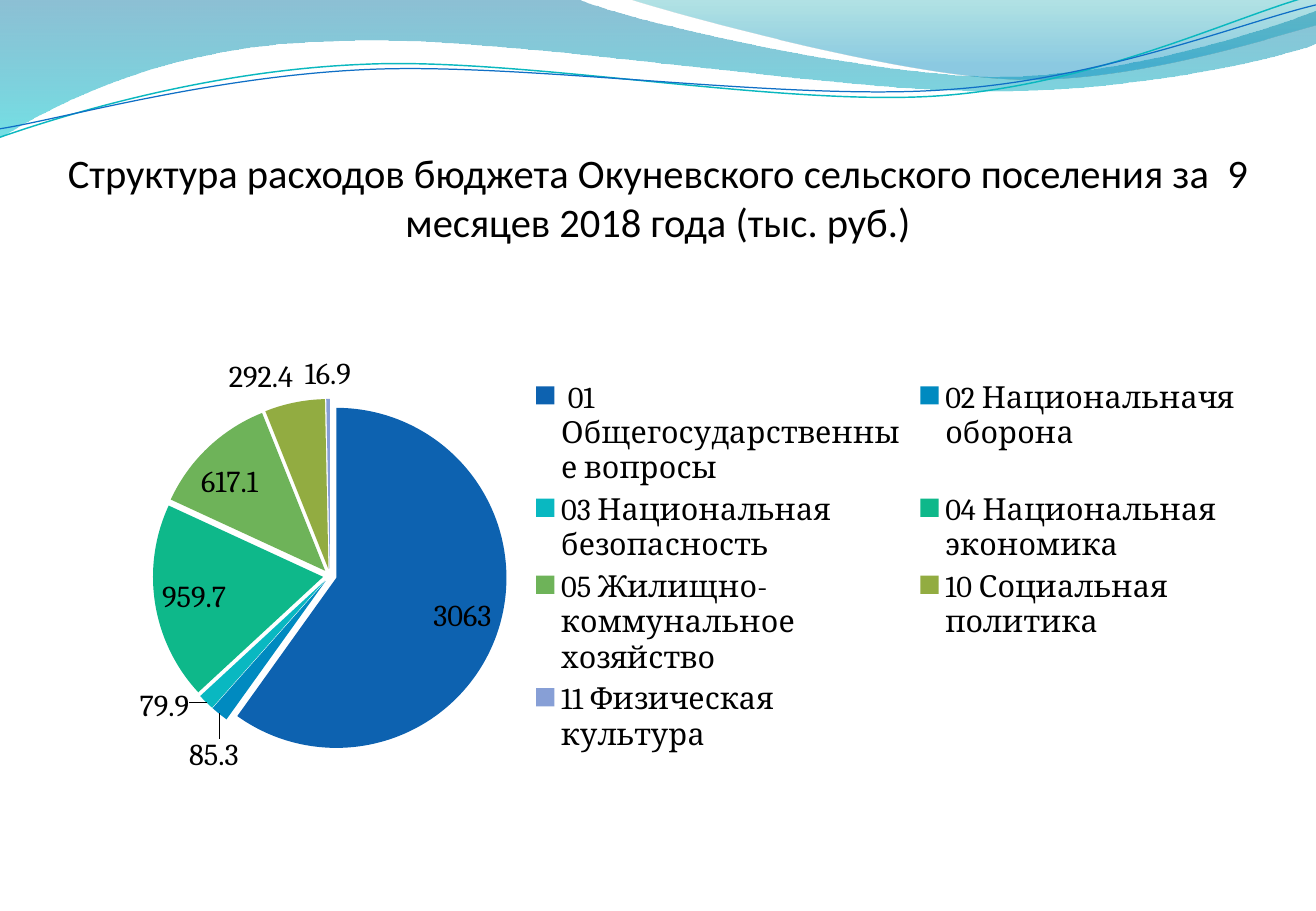
from lxml import etree
from pptx import Presentation
from pptx.chart.data import CategoryChartData
from pptx.dml.color import RGBColor
from pptx.enum import chart as ch, text
from pptx.oxml import parse_xml
from pptx.oxml.ns import nsdecls, qn
from pptx.util import Inches, Pt

TITLE = ("Структура расходов бюджета Окуневского сельского поселения "
         "за  9 месяцев 2018 года (тыс. руб.)")

INSIDE, OUTSIDE = ch.XL_LABEL_POSITION.INSIDE_END, ch.XL_LABEL_POSITION.OUTSIDE_END
# Category, value, colour, label position, label offset (share of chart)
EXPENSES = [
    (" 01 Общегосударственные вопросы", 3063, "0D62B0", INSIDE, (0, 0.01)),
    ("02 Национальначя оборона", 85.3, "008AC0", OUTSIDE, (0.02, 0.03)),
    ("03 Национальная безопасность", 79.9, "09B8C1", OUTSIDE, (-0.01, -0.03)),
    ("04 Национальная экономика", 959.7, "0EB88A", INSIDE, (0, 0.02)),
    ("05 Жилищно-коммунальное хозяйство", 617.1, "6EB359", INSIDE, (-0.01, 0.02)),
    ("10 Социальная политика", 292.4, "92AC41", OUTSIDE, None),
    ("11 Физическая культура", 16.9, "879FD6", OUTSIDE, None),
]

# Waves: a start point, then points (2 numbers) or Bezier curves (6 numbers)
# Gradient stops: position, colour, opacity, in percent
FILLED_WAVES = [
    ([(0, 0), (4.77, 0), (5.15, 0.17, 7.19, 0.63, 8.22, 0.63),
      (9.24, 0.63, 10.38, 0.26, 10.83, 0.09), (10.83, 0.36),
      (10.65, 0.44, 9.42, 0.76, 8.08, 0.75), (6.74, 0.75, 4.14, 0.28, 2.79, 0.34),
      (1.4, 0.36, 0.5, 0.83, 0, 1.13)],
     [(0, "0074A1", 45), (100, "00C6CF", 55)]),
    ([(5.19, 0), (5.52, 0.11, 7.39, 0.62, 8.33, 0.65),
      (9.27, 0.69, 10.42, 0.32, 10.83, 0.21), (10.83, 0)],
     [(0, "00A1A9", 30), (80, "008BBF", 45)]),
]
LINE_WAVES = [
    ([(0, 1.13), (0.52, 0.95, 1.71, 0.58, 3, 0.53), (4.28, 0.47, 6.42, 0.88, 7.72, 0.79),
      (9.02, 0.7, 10.17, 0.13, 10.81, -0.04)], "0AB8BF", 0.85),
    ([(0, 1.06), (0.51, 0.98, 1.77, 0.62, 3.07, 0.57), (4.36, 0.52, 6.47, 0.83, 7.76, 0.74),
      (9.06, 0.66, 10.2, 0.19, 10.83, 0.04)], "0F6FC6", 0.75),
]
UNITS = 100  # freeform units per inch


def rgb(color):
    return RGBColor.from_string(color)


def add_wave(slide, steps, close):
    """Join the end points, then bend the segments that have control points."""
    ends = [(round(s[-2] * UNITS), round(s[-1] * UNITS)) for s in steps]
    builder = slide.shapes.build_freeform(*ends[0], scale=Inches(1 / UNITS))
    builder.add_line_segments(ends[1:], close=close)
    sp = builder.convert_to_shape()
    sp.shadow.inherit = False
    left, top = (min(axis) for axis in zip(*ends))
    segments = list(sp._element.iter(qn("a:lnTo")))
    for step, segment in zip(steps[1:], segments):
        if len(step) == 6:
            curve = etree.Element(qn("a:cubicBezTo"))
            for x, y in zip(step[::2], step[1::2]):
                etree.SubElement(curve, qn("a:pt"), x=str(round(x * UNITS) - left),
                                 y=str(round(y * UNITS) - top))
            segment.getparent().replace(segment, curve)
    return sp


def fill_gradient(sp, stops):
    sp.fill.gradient()
    grad = sp._element.spPr.find(qn("a:gradFill"))
    gs = "".join(f'<a:gs pos="{pos * 1000}"><a:srgbClr val="{color}">'
                 f'<a:alpha val="{alpha * 1000}"/></a:srgbClr></a:gs>'
                 for pos, color, alpha in stops)
    grad.getparent().replace(grad, parse_xml(
        f'<a:gradFill {nsdecls("a")} rotWithShape="1"><a:gsLst>{gs}</a:gsLst>'
        '<a:lin ang="5400000" scaled="0"/></a:gradFill>'))


def place(element, index, **values):
    """Set a manual chart layout, in shares of the chart area."""
    old = element.find(qn("c:layout"))
    if old is not None:
        element.remove(old)
    items = "".join(f'<c:{k} val="{v}"/>' for k, v in values.items())
    element.insert(index, parse_xml(
        f'<c:layout {nsdecls("c")}><c:manualLayout>{items}</c:manualLayout></c:layout>'))


prs = Presentation()
prs.slide_width, prs.slide_height = Inches(10.83), Inches(7.5)
slide = prs.slides.add_slide(prs.slide_layouts[5])

# Waves along the top
for steps, stops in FILLED_WAVES:
    sp = add_wave(slide, steps, True)
    fill_gradient(sp, stops)
    sp.line.fill.background()
for steps, color, width in LINE_WAVES:
    sp = add_wave(slide, steps, False)
    sp.fill.background()
    sp.line.color.rgb = rgb(color)
    sp.line.width = Pt(width)

# Title
title = slide.shapes.title
title.left, title.top, title.width, title.height = map(Inches, (0.54, 0.77, 9.75, 1.25))
tf = title.text_frame
tf.text = TITLE
tf.word_wrap = True
tf.auto_size = text.MSO_AUTO_SIZE.NONE
tf.vertical_anchor = text.MSO_ANCHOR.BOTTOM
tf.margin_left = tf.margin_right = tf.margin_bottom = 0
tf.margin_top = Inches(0.05)
p = tf.paragraphs[0]
p.alignment = text.PP_ALIGN.CENTER
p.font.name, p.font.size, p.font.color.rgb = "Calibri", Pt(24), rgb("000000")

# Pie chart with a legend
data = CategoryChartData()
data.categories = [row[0] for row in EXPENSES]
data.add_series("Series 1", [row[1] for row in EXPENSES])
chart = slide.shapes.add_chart(ch.XL_CHART_TYPE.PIE, *map(Inches, (0.57, 2.11, 9.75, 5.11)),
                               data).chart
chart.has_title = False
chart.font.name, chart.font.size, chart.font.color.rgb = "Cambria", Pt(18), rgb("000000")
place(chart._chartSpace.chart.plotArea, 0,
      layoutTarget="inner", xMode="edge", yMode="edge", x=0.07, y=0.23, w=0.3, h=0.57)
chart.has_legend = True
chart.legend.position = ch.XL_LEGEND_POSITION.RIGHT
chart.legend.include_in_layout = False

# Slices and their labels
plot = chart.plots[0]
plot.vary_by_categories = True
series = plot.series[0]
labels = series.data_labels
labels.show_value = True
for i, (_, _, color, position, offset) in enumerate(EXPENSES):
    point = series.points[i]
    point.format.fill.solid()
    point.format.fill.fore_color.rgb = rgb(color)
    point.data_label.position = position
    if offset:
        place(labels._element.findall(qn("c:dLbl"))[i], 1, x=offset[0], y=offset[1])
leader = labels._element.find(qn("c:showLeaderLines"))
if leader is None:
    leader = etree.SubElement(labels._element, qn("c:showLeaderLines"))
leader.set("val", "1")
explosion = etree.Element(qn("c:explosion"), val="4")
series._element.find(qn("c:dPt")).addprevious(explosion)

prs.save("out.pptx")
